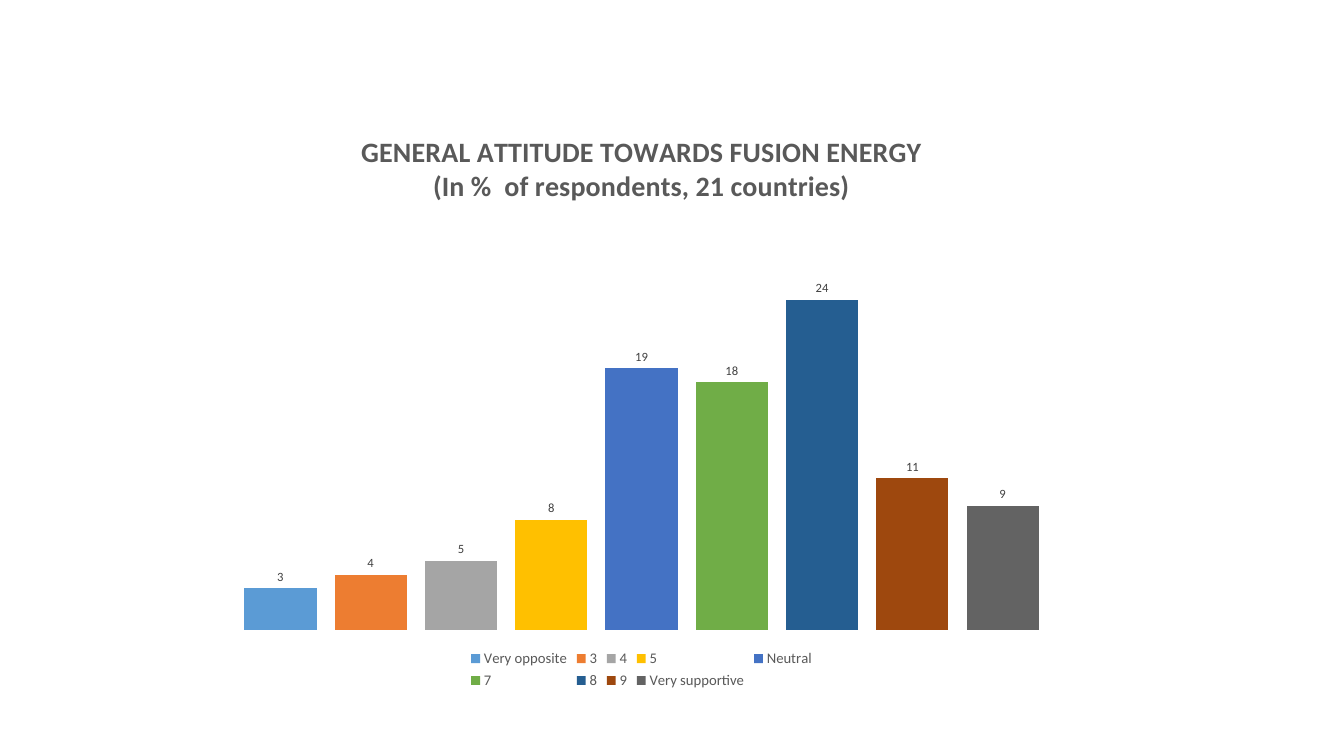
from lxml import etree
from pptx import Presentation
from pptx.chart.data import CategoryChartData
from pptx.dml.color import RGBColor
from pptx.enum.chart import XL_CHART_TYPE, XL_LABEL_POSITION, XL_LEGEND_POSITION
from pptx.oxml.ns import qn
from pptx.util import Pt

TITLE = ["GENERAL ATTITUDE TOWARDS FUSION ENERGY",
         "(In %  of respondents, 21 countries)"]
ATTITUDES = [
    ("Very opposite", 3, "5B9BD5"),
    ("3", 4, "ED7D31"),
    ("4", 5, "A5A5A5"),
    ("5", 8, "FFC000"),
    ("Neutral", 19, "4472C4"),
    ("7", 18, "70AD47"),
    ("8", 24, "255E91"),
    ("9", 11, "9E480E"),
    ("Very supportive", 9, "636363"),
]
CHART_BOX = (122.4, 80.64, 671.76, 414.72)
PLOT_SHARE = {"x": 0.02, "y": 0.18, "w": 0.96, "h": 0.71}


def rgb(value):
    return RGBColor.from_string(value)


def style(font, size, color, bold=False):
    font.name = "Calibri"
    font.size = Pt(size)
    font.bold = bold
    font.color.rgb = rgb(color)


def add_text(p, text, **fmt):
    r = p.add_run()
    r.text = text
    style(r.font, **fmt)


def place_plot(chart, share):
    plot_area = chart._chartSpace.chart.plotArea
    for old in plot_area.findall(qn("c:layout")):
        plot_area.remove(old)
    layout = etree.Element(qn("c:layout"))
    manual = etree.SubElement(layout, qn("c:manualLayout"))
    settings = {"layoutTarget": "inner", "xMode": "edge", "yMode": "edge", **share}
    for tag, value in settings.items():
        etree.SubElement(manual, qn("c:" + tag)).set("val", str(value))
    plot_area.insert(0, layout)


def add_attitude_chart(s):
    data = CategoryChartData(number_format="0")
    data.categories = ["1"]
    for name, value, _ in ATTITUDES:
        data.add_series(name, [value])
    chart = s.shapes.add_chart(XL_CHART_TYPE.COLUMN_CLUSTERED,
                               *map(Pt, CHART_BOX), data).chart
    style(chart.font, 10, "000000")

    tf = chart.chart_title.text_frame
    for i, line in enumerate(TITLE):
        p = tf.add_paragraph() if i else tf.paragraphs[0]
        add_text(p, line, size=20, color="595959", bold=True)
    chart.chart_title.include_in_layout = False

    chart.has_legend = True
    chart.legend.position = XL_LEGEND_POSITION.BOTTOM
    chart.legend.include_in_layout = False
    style(chart.legend.font, 10.5, "595959")

    axis = chart.value_axis
    axis.minimum_scale, axis.maximum_scale = 0, 30
    axis.has_major_gridlines = False
    axis.visible = chart.category_axis.visible = False

    plot = chart.plots[0]
    plot.gap_width, plot.overlap = 150, -25
    plot.vary_by_categories = False
    for series, (_, _, color) in zip(plot.series, ATTITUDES):
        series.format.fill.solid()
        series.format.fill.fore_color.rgb = rgb(color)
        labels = series.data_labels
        labels.show_value = True
        labels.number_format = "0"
        labels.number_format_is_linked = False
        labels.position = XL_LABEL_POSITION.OUTSIDE_END
        style(labels.font, 9, "404040")
    place_plot(chart, PLOT_SHARE)


def main():
    prs = Presentation()
    prs.slide_width, prs.slide_height = Pt(960), Pt(540)
    s = prs.slides.add_slide(prs.slide_layouts[6])
    add_attitude_chart(s)
    prs.save("out.pptx")


if __name__ == "__main__":
    main()
